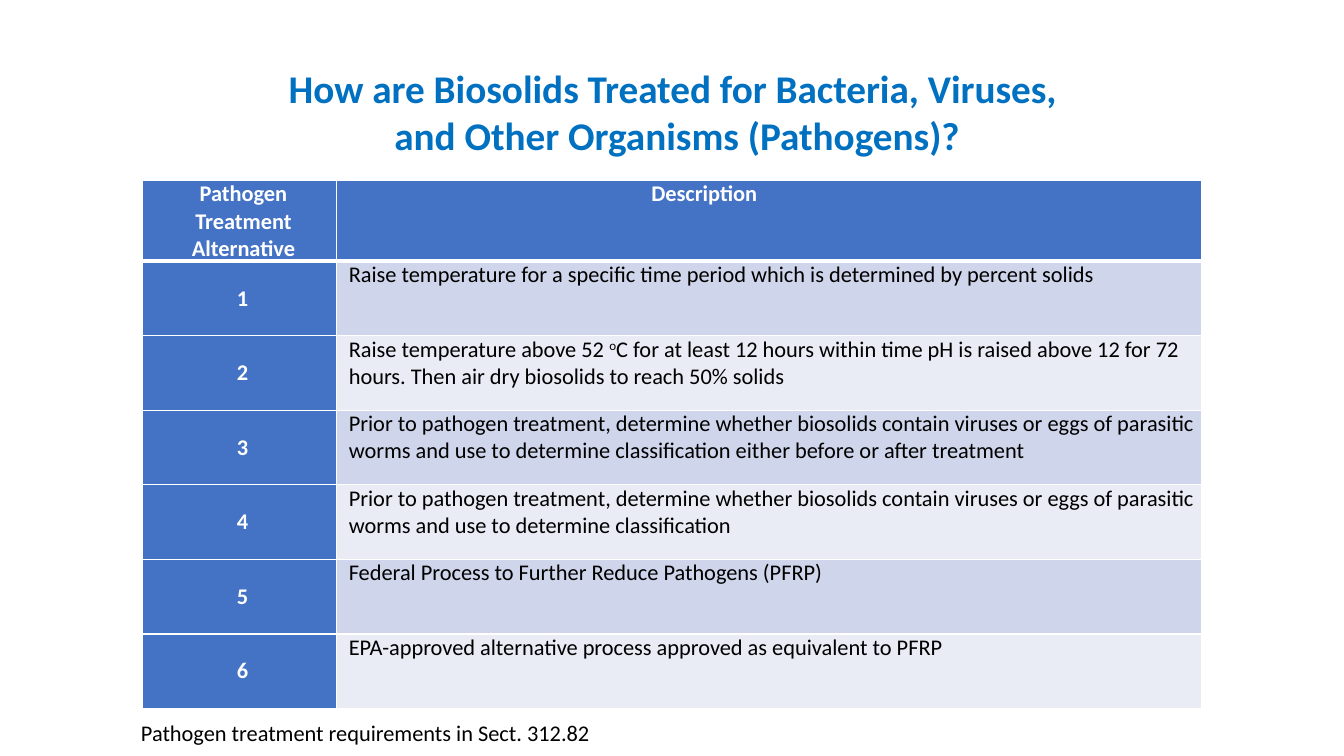
from lxml.etree import SubElement
from pptx import Presentation
from pptx.dml.color import RGBColor
from pptx.enum.text import MSO_ANCHOR, PP_ALIGN
from pptx.oxml.ns import qn
from pptx.util import Inches, Pt

TITLE = ["How are Biosolids Treated for Bacteria, Viruses, ", "and Other Organisms (Pathogens)?"]
HEADERS = ["Pathogen Treatment Alternative", "Description"]
DESCRIPTIONS = [
    "Raise temperature for a specific time period which is determined by percent solids",
    "Raise temperature above 52 ^o^C for at least 12 hours within time pH is raised above 12 for 72 hours. "
    "Then air dry biosolids to reach 50% solids",
    "Prior to pathogen treatment, determine whether biosolids contain viruses or eggs of parasitic worms "
    "and use to determine classification either before or after treatment",
    "Prior to pathogen treatment, determine whether biosolids contain viruses or eggs of parasitic worms "
    "and use to determine classification",
    "Federal Process to Further Reduce Pathogens (PFRP)",
    "EPA-approved alternative process approved as equivalent to PFRP",
]
FOOTNOTE = "Pathogen treatment requirements in Sect. 312.82"
COLORS = {
    "title": "0070C0",
    "header": "4472C4",
    "odd": "CFD5EA",
    "even": "E9EBF5",
    "white": "FFFFFF",
    "black": "000000",
}
COLUMN_WIDTHS = [1.93, 8.58]
ROW_HEIGHT = 0.74


def write(text_frame, lines, size=16, color="black", bold=False, align=PP_ALIGN.LEFT, indent=0):
    paragraph = text_frame.paragraphs[0]
    paragraph.alignment = align
    if indent:
        properties = paragraph._p.get_or_add_pPr()
        properties.set("marL", str(Inches(indent)))
        properties.set("indent", "0")
    for line_index, line in enumerate(lines):
        if line_index:
            paragraph.add_line_break()
        for part_index, part in enumerate(line.split("^")):
            run = paragraph.add_run()
            run.text = part
            run.font.name = "Calibri"
            run.font.size = Pt(size)
            run.font.bold = bold
            run.font.color.rgb = RGBColor.from_string(COLORS[color])
            if part_index % 2:
                run.font._element.set("baseline", "30000")


def add_text(slide, left, top, width, height, lines, **text_format):
    text_frame = slide.shapes.add_textbox(
        Inches(left), Inches(top), Inches(width), Inches(height)
    ).text_frame
    text_frame.word_wrap = True
    write(text_frame, lines, **text_format)


def style_cell(cell, fill, top_width, bottom_width):
    cell.fill.solid()
    cell.fill.fore_color.rgb = RGBColor.from_string(COLORS[fill])
    cell.margin_left = cell.margin_right = Inches(0.07)
    cell.margin_top = cell.margin_bottom = 0
    properties = cell._tc.get_or_add_tcPr()
    borders = [("a:lnL", 1), ("a:lnR", 1), ("a:lnT", top_width), ("a:lnB", bottom_width)]
    for position, (tag, width) in enumerate(borders):
        border = SubElement(properties, qn(tag), w=str(Pt(width)))
        solid_fill = SubElement(border, qn("a:solidFill"))
        SubElement(solid_fill, qn("a:srgbClr"), val=COLORS["white"])
        properties.insert(position, border)


def add_alternatives_table(slide):
    row_count = len(DESCRIPTIONS) + 1
    table = slide.shapes.add_table(
        row_count, len(COLUMN_WIDTHS), Inches(1.41), Inches(1.79),
        Inches(sum(COLUMN_WIDTHS)), Inches(ROW_HEIGHT * row_count),
    ).table
    for column, width in zip(table.columns, COLUMN_WIDTHS):
        column.width = Inches(width)
    for row in table.rows:
        row.height = Inches(ROW_HEIGHT)

    header_formats = [{"align": PP_ALIGN.CENTER, "indent": 0.08}, {"indent": 3.05}]
    for column_index, (header, text_format) in enumerate(zip(HEADERS, header_formats)):
        cell = table.cell(0, column_index)
        style_cell(cell, "header", 1, 3)
        write(cell.text_frame, [header], color="white", bold=True, **text_format)

    for number, description in enumerate(DESCRIPTIONS, 1):
        top_width = 3 if number == 1 else 1
        number_cell = table.cell(number, 0)
        style_cell(number_cell, "header", top_width, 1)
        number_cell.vertical_anchor = MSO_ANCHOR.MIDDLE
        write(number_cell.text_frame, [str(number)], color="white", bold=True,
              align=PP_ALIGN.CENTER, indent=0.06)
        description_cell = table.cell(number, 1)
        style_cell(description_cell, "odd" if number % 2 else "even", top_width, 1)
        write(description_cell.text_frame, [description], indent=0.05)


def main():
    presentation = Presentation()
    presentation.slide_width = Inches(13.33)
    presentation.slide_height = Inches(7.5)
    slide = presentation.slides.add_slide(presentation.slide_layouts[6])
    add_text(slide, 1.18, 0.59, 11.07, 1.04, TITLE, size=28, color="title", bold=True,
             align=PP_ALIGN.CENTER)
    add_alternatives_table(slide)
    add_text(slide, 1.3, 7.09, 10.51, 0.37, [FOOTNOTE])
    presentation.save("out.pptx")


if __name__ == "__main__":
    main()
